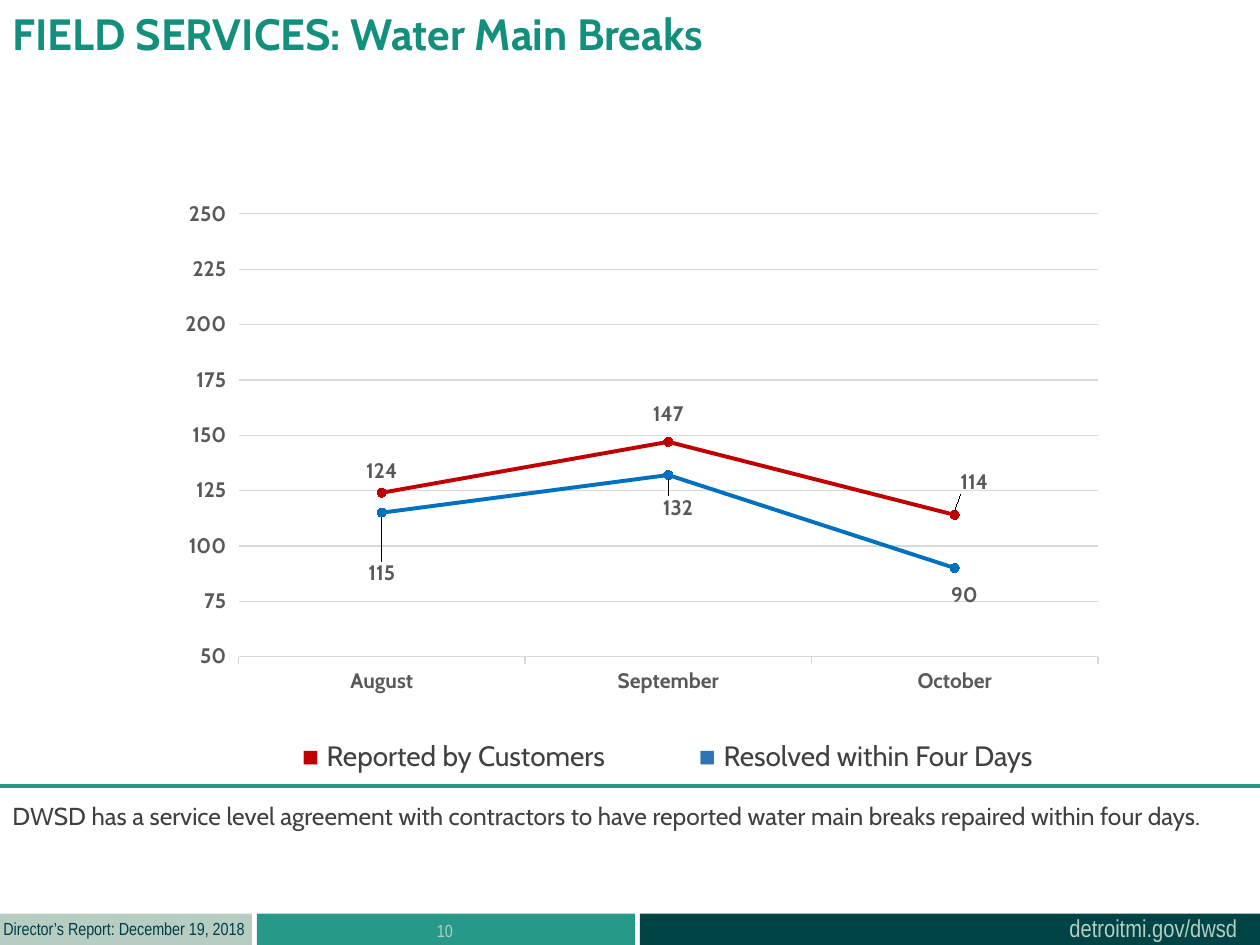
import pptx
import pptx.chart.data
import pptx.dml.color
import pptx.enum.chart
import pptx.enum.shapes
import pptx.enum.text
import pptx.oxml
import pptx.oxml.ns
import pptx.util
from lxml import etree

Cm, Pt, qn = pptx.util.Cm, pptx.util.Pt, pptx.oxml.ns.qn
ALIGN = pptx.enum.text.PP_ALIGN
TICK = pptx.enum.chart.XL_TICK_MARK
LABEL = pptx.enum.chart.XL_LABEL_POSITION

COLORS = {
    "teal": "279989", "deep": "004445", "sage": "B7CDC2", "navy": "003B49",
    "title": "138F7E", "text": "404040", "axis": "595959", "grid": "D9D9D9",
    "red": "C00000", "blue": "0070C0", "legend blue": "2E75B6", "black": "000000",
}

TITLE = "FIELD SERVICES: Water Main Breaks"
MONTHS = ["August", "September", "October"]
# Label shifts are fractions of the chart's width and height.
SERIES = [
    {"name": "Reported by Customers", "values": [124, 147, 114],
     "color": "red", "key": "red", "position": LABEL.ABOVE,
     "shifts": [(0, 0), (0, -0.01), (0.02, -0.02)]},
    {"name": "Resolved within Four Days", "values": [115, 132, 90],
     "color": "blue", "key": "legend blue", "position": LABEL.BELOW,
     "shifts": [(0, 0.07), (0.01, 0.02), (0.01, 0.01)]},
]
PLOT_AREA = {"x": 0.1, "y": 0.04, "w": 0.88, "h": 0.79}

FOOTER_TOP, FOOTER_HEIGHT = 18.42, 0.63
FOOTER_BARS = [(0, 5.08, "sage"), (5.18, 7.62, "teal"), (12.9, 12.5, "deep")]
# text, (left, top, width, height), font, size, color, alignment
TEXTS = [
    ("detroitmi.gov/dwsd", (21.31, 18.29, 4, 0.86),
     "Arial Narrow", 14, "sage", ALIGN.LEFT),
    ("Director’s Report: December 19, 2018", (-0.18, 18.39, 5.56, 0.69),
     "Arial Narrow", 10, "navy", ALIGN.LEFT),
    ("10", (5.16, FOOTER_TOP, 7.62, FOOTER_HEIGHT),
     "Arial Narrow", 10, "sage", ALIGN.CENTER),
    ("DWSD has a service level agreement with contractors to have reported "
     "water main breaks repaired within four days.", (0, 16.03, 25.4, 0.86),
     "Cabin", 14, "text", ALIGN.LEFT),
]


def rgb(name):
    return pptx.dml.color.RGBColor.from_string(COLORS[name])


def box(left, top, width, height):
    return Cm(left), Cm(top), Cm(width), Cm(height)


def set_font(font, name, size, color, bold=False):
    font.name, font.size, font.bold = name, Pt(size), bold
    font.color.rgb = rgb(color)


def set_line(line, color, width):
    line.color.rgb = rgb(color)
    line.width = Pt(width)


def set_layout(parent, index, settings):
    """Give a chart element a manual layout as its child at index."""
    for old in parent.findall(qn("c:layout")):
        parent.remove(old)
    layout = pptx.oxml.parse_xml(
        f'<c:layout {pptx.oxml.ns.nsdecls("c")}><c:manualLayout/></c:layout>')
    for tag, value in settings.items():
        etree.SubElement(layout[0], qn(f"c:{tag}")).set("val", str(value))
    parent.insert(index, layout)


def add_text_box(slide, place):
    frame = slide.shapes.add_textbox(*box(*place)).text_frame
    frame.word_wrap = True
    return frame.paragraphs[0]


def add_title(slide):
    title = slide.shapes.title
    title.left, title.top, title.width, title.height = box(0, 0, 19.28, 1.96)
    title.text_frame.text = TITLE
    title.text_frame.vertical_anchor = pptx.enum.text.MSO_ANCHOR.TOP
    heading = title.text_frame.paragraphs[0]
    heading.alignment = ALIGN.LEFT
    set_font(heading.font, "Cabin", 25, "title", True)


def add_footer_bars(slide):
    for left, width, color in FOOTER_BARS:
        bar = slide.shapes.add_shape(
            pptx.enum.shapes.MSO_SHAPE.RECTANGLE,
            *box(left, FOOTER_TOP, width, FOOTER_HEIGHT))
        bar.shadow.inherit = False
        bar.fill.solid()
        bar.fill.fore_color.rgb = rgb(color)
        bar.line.fill.background()


def add_breaks_chart(slide):
    breaks = pptx.chart.data.CategoryChartData(number_format="#,##0")
    breaks.categories = MONTHS
    for entry in SERIES:
        breaks.add_series(entry["name"], entry["values"])
    chart = slide.shapes.add_chart(
        pptx.enum.chart.XL_CHART_TYPE.LINE_MARKERS,
        *box(2.84, 3.86, 19.69, 11.3), breaks).chart
    chart.has_legend = chart.has_title = False
    set_font(chart.font, "Calibri", 10, "black")

    months, counts = chart.category_axis, chart.value_axis
    for axis in (months, counts):
        axis.major_tick_mark, axis.minor_tick_mark = TICK.OUTSIDE, TICK.NONE
        set_font(axis.tick_labels.font, "Cabin", 12, "axis", True)
    set_line(months.format.line, "grid", 0.75)
    counts.format.line.fill.background()
    counts.minimum_scale, counts.maximum_scale, counts.major_unit = 50, 250, 25
    set_line(counts.major_gridlines.format.line, "grid", 0.75)
    counts.tick_labels.number_format = "#,##0"
    counts.tick_labels.number_format_is_linked = False

    chart.plots[0].vary_by_categories = False
    for series, entry in zip(chart.plots[0].series, SERIES):
        series.smooth = False
        set_line(series.format.line, entry["color"], 2.25)
        marker = series.marker
        marker.style, marker.size = pptx.enum.chart.XL_MARKER_STYLE.CIRCLE, 5
        marker.format.fill.solid()
        marker.format.fill.fore_color.rgb = rgb(entry["color"])
        set_line(marker.format.line, entry["color"], 0.75)
        for index in range(len(MONTHS)):
            label = series.points[index].data_label
            set_font(label.font, "Cabin", 12, "axis", True)
            label.position = entry["position"]

    shifts = [shift for entry in SERIES for shift in entry["shifts"]]
    for label, (x, y) in zip(list(chart.element.iter(qn("c:dLbl"))), shifts):
        set_layout(label, 1, {"x": x, "y": y})
    plot_area = next(chart.element.iter(qn("c:plotArea")))
    set_layout(plot_area, 0, {"layoutTarget": "inner", "xMode": "edge",
                              "yMode": "edge", **PLOT_AREA})


def add_legend(slide):
    legend = add_text_box(slide, (5.84, 14.76, 16.5, 0.94))
    stops = etree.SubElement(legend._p.get_or_add_pPr(), qn("a:tabLst"))
    etree.SubElement(stops, qn("a:tab"), pos=str(Cm(8)), algn="l")
    legend.font.size = Pt(16)
    for index, entry in enumerate(SERIES):
        key = ("\t" if index else "") + "■ "
        for text, font, color in ((key, "Arial", entry["key"]),
                                  (entry["name"], "Cabin", "text")):
            run = legend.add_run()
            run.text = text
            set_font(run.font, font, 16, color)


def add_divider(slide):
    divider = slide.shapes.add_connector(
        pptx.enum.shapes.MSO_CONNECTOR.STRAIGHT,
        Cm(25.4), Cm(15.85), Cm(0), Cm(15.85))
    set_line(divider.line, "teal", 2.25)
    etree.SubElement(divider._element.spPr, qn("a:effectLst"))


def main():
    deck = pptx.Presentation()
    deck.slide_width, deck.slide_height = Cm(25.4), Cm(19.05)
    slide = deck.slides.add_slide(deck.slide_layouts.get_by_name("Title Only"))
    add_footer_bars(slide)
    add_title(slide)
    add_breaks_chart(slide)
    for text, place, font, size, color, alignment in TEXTS:
        paragraph = add_text_box(slide, place)
        paragraph.text = text
        paragraph.alignment = alignment
        set_font(paragraph.font, font, size, color)
    add_divider(slide)
    add_legend(slide)
    deck.save("out.pptx")


if __name__ == "__main__":
    main()
